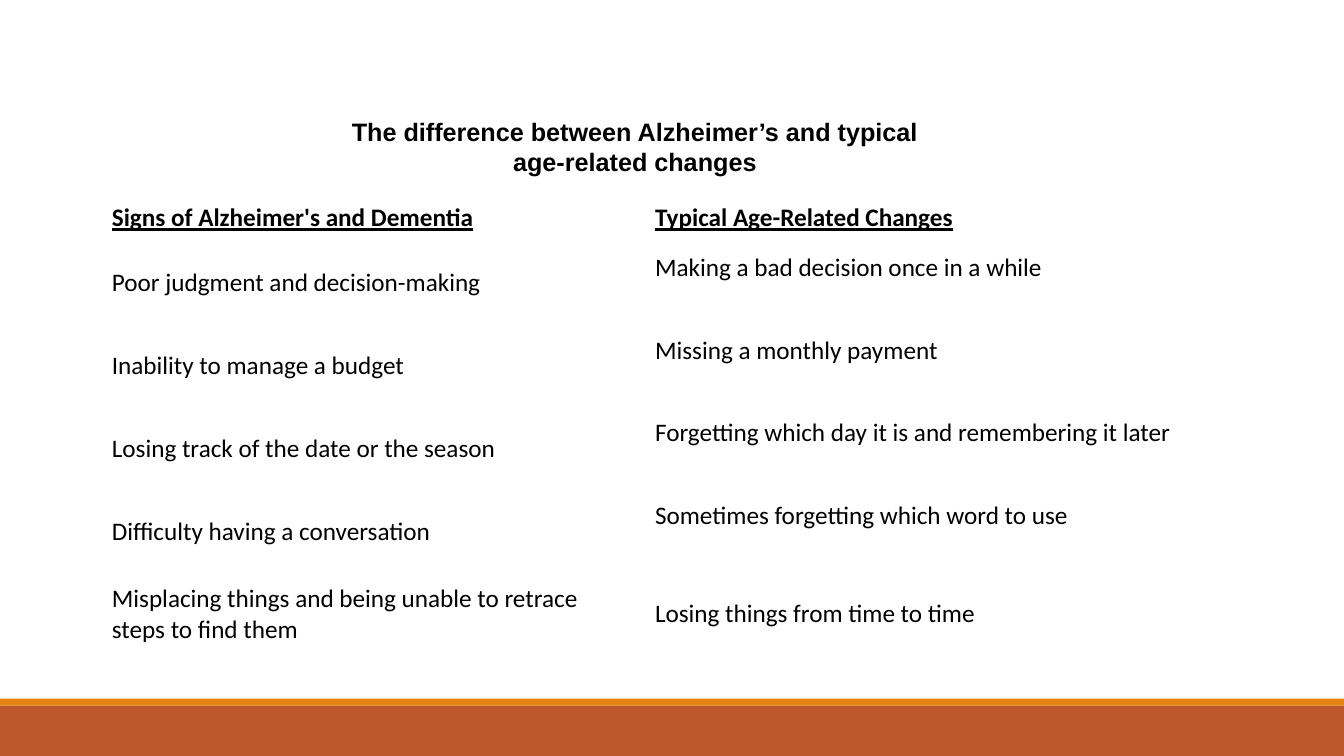
from dataclasses import dataclass

from pptx import Presentation
from pptx import util as u
from pptx.dml.color import RGBColor
from pptx.enum import shapes, text


@dataclass(frozen=True)
class Theme:
    ink: RGBColor = RGBColor(0, 0, 0)
    rust: RGBColor = RGBColor(0xBD, 0x58, 0x2C)
    orange: RGBColor = RGBColor(0xE4, 0x83, 0x12)
    title_font: str = "Arial"
    body_font: str = "Calibri"
    text_size: float = 18
    line_height: float = 22
    cell_margin: float = 3.6


SLIDE_WIDTH, SLIDE_HEIGHT = 960, 540
HEADINGS = ("Signs of Alzheimer's and Dementia", "Typical Age-Related Changes")
COMPARISONS = [
    ("Poor judgment and decision-making", "Making a bad decision once in a while"),
    ("Inability to manage a budget", "Missing a monthly payment"),
    ("Losing track of the date or the season",
     "Forgetting which day it is and remembering it later"),
    ("Difficulty having a conversation", "Sometimes forgetting which word to use"),
    ("Misplacing things and being unable to retrace steps to find them",
     "Losing things from time to time"),
]


class SlideBuilder:
    def __init__(self, slide, theme):
        self.slide = slide
        self.theme = theme

    def style(self, paragraph, font_name, bold=False, underline=False):
        font = paragraph.font
        font.name = font_name
        font.size = u.Pt(self.theme.text_size)
        font.color.rgb = self.theme.ink
        font.bold = bold
        font.underline = underline

    def band(self, top, height, color):
        """Draw a full-width colour band."""
        shape = self.slide.shapes.add_shape(
            shapes.MSO_SHAPE.RECTANGLE, 0, u.Pt(top), u.Pt(SLIDE_WIDTH), u.Pt(height))
        shape.shadow.inherit = False
        shape.fill.solid()
        shape.fill.fore_color.rgb = color
        shape.line.fill.background()

    def title(self, wording, left, top, width, height):
        box = self.slide.shapes.add_textbox(
            u.Pt(left), u.Pt(top), u.Pt(width), u.Pt(height))
        frame = box.text_frame
        frame.word_wrap = True
        frame.auto_size = text.MSO_AUTO_SIZE.SHAPE_TO_FIT_TEXT
        paragraph = frame.paragraphs[0]
        paragraph.text = wording
        paragraph.alignment = text.PP_ALIGN.CENTER
        self.style(paragraph, self.theme.title_font, bold=True)

    def cell(self, cell, wording, heading, raised):
        """Fill a cell; raised text keeps one line of space below it."""
        cell.fill.background()
        cell.vertical_anchor = text.MSO_ANCHOR.MIDDLE
        if raised:
            cell.margin_bottom = u.Pt(self.theme.cell_margin + self.theme.line_height)
        cell.text = wording
        self.style(cell.text_frame.paragraphs[0], self.theme.body_font,
                   bold=heading, underline=heading)

    def table(self, rows, left, top, column_widths, heading_height, row_height):
        heights = [heading_height] + [row_height] * (len(rows) - 1)
        table = self.slide.shapes.add_table(
            len(rows), len(column_widths), u.Pt(left), u.Pt(top),
            u.Pt(sum(column_widths)), u.Pt(sum(heights))).table
        table.first_row = False
        table.horz_banding = False
        for column, width in zip(table.columns, column_widths):
            column.width = u.Pt(width)
        for row, height in zip(table.rows, heights):
            row.height = u.Pt(height)
        last = len(rows) - 1
        for r, wordings in enumerate(rows):
            for c, wording in enumerate(wordings):
                self.cell(table.cell(r, c), wording, heading=r == 0,
                          raised=c == 1 and 0 < r < last)


def main():
    presentation = Presentation()
    presentation.slide_width = u.Pt(SLIDE_WIDTH)
    presentation.slide_height = u.Pt(SLIDE_HEIGHT)
    theme = Theme()
    builder = SlideBuilder(
        presentation.slides.add_slide(presentation.slide_layouts[6]), theme)
    builder.band(504, 36, theme.rust)
    builder.band(499, 5, theme.orange)
    builder.table([HEADINGS] + COMPARISONS, left=72.7, top=139,
                  column_widths=(388, 387.4), heading_height=33.8, row_height=59.1)
    builder.title("The difference between Alzheimer’s and typical age-related changes",
                  left=240, top=79.2, width=427, height=51)
    presentation.save("out.pptx")


if __name__ == "__main__":
    main()
